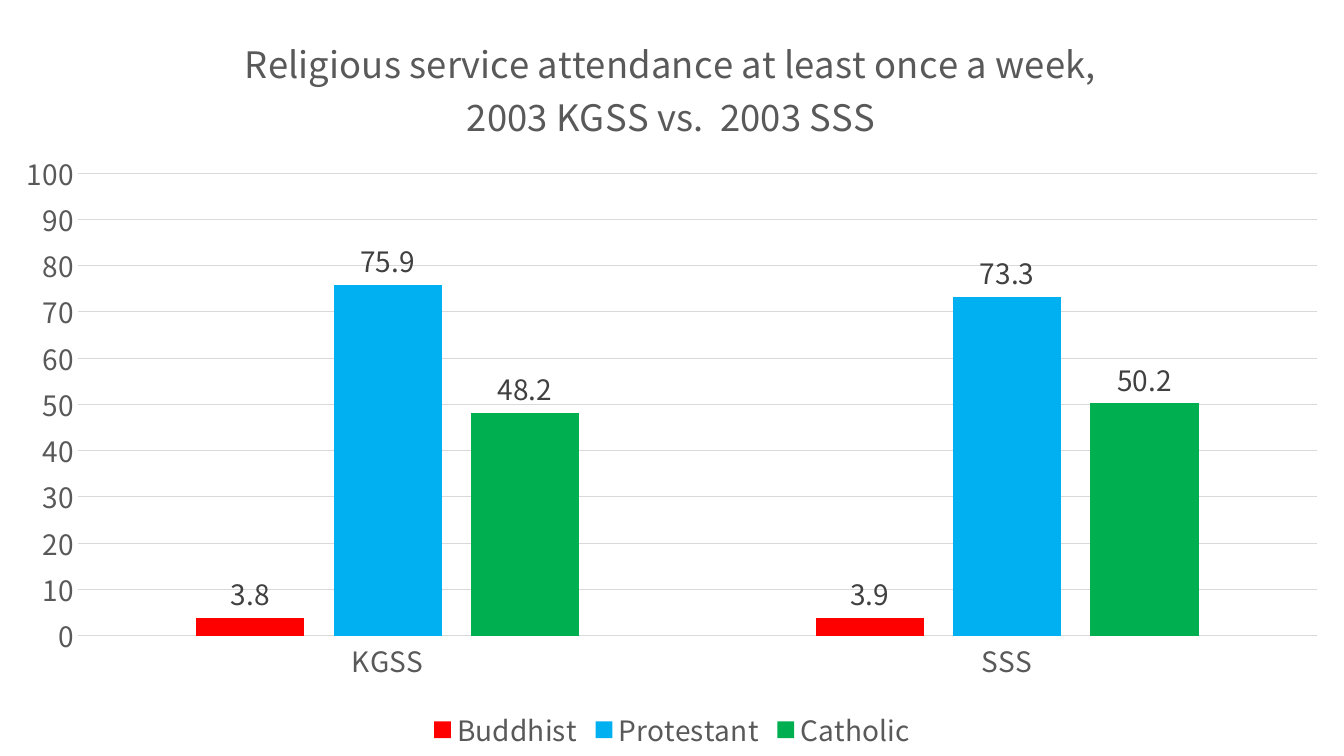
from lxml.etree import SubElement
from pptx import Presentation
from pptx.chart.data import CategoryChartData as ChartData
from pptx.dml.color import RGBColor
from pptx.enum.chart import XL_CHART_TYPE as ChartType
from pptx.enum.chart import XL_LABEL_POSITION as LabelPosition
from pptx.enum.chart import XL_LEGEND_POSITION as LegendPosition
from pptx.enum.chart import XL_TICK_MARK as TickMark
from pptx.oxml.ns import qn
from pptx.util import Cm, Pt

FONT = "Noto Sans CJK KR"
WHITE = RGBColor(0xFF, 0xFF, 0xFF)
GRAY = RGBColor(0x59, 0x59, 0x59)
DARK_GRAY = RGBColor(0x40, 0x40, 0x40)
LIGHT_GRAY = RGBColor(0xD9, 0xD9, 0xD9)
RED = RGBColor(0xFF, 0x00, 0x00)
BLUE = RGBColor(0x00, 0xB0, 0xF0)
GREEN = RGBColor(0x00, 0xB0, 0x50)

TITLE_LINES = (
    "Religious service attendance at least once a week,",
    "2003 KGSS vs.  2003 SSS",
)
SURVEYS = ("KGSS", "SSS")
ATTENDANCE = (
    ("Buddhist", (3.8, 3.9), RED),
    ("Protestant", (75.9, 73.3), BLUE),
    ("Catholic", (48.2, 50.2), GREEN),
)


def style_font(font, size=20, color=GRAY):
    """Apply the slide typeface with a size and colour."""
    font.name = FONT
    font.size = Pt(size)
    font.bold = False
    font.color.rgb = color


def write_line(para, text, **style):
    """Write one formatted line of text into a paragraph."""
    span = para.add_run()
    span.text = text
    style_font(span.font, **style)


def style_line(line):
    """Draw a thin light gray line."""
    line.color.rgb = LIGHT_GRAY
    line.width = Pt(0.75)


def place_part(element, inner=False, **fractions):
    """Place a chart part by fractions of the chart's size."""
    layout = element.find(qn("c:layout"))
    if layout is None:
        layout = element.makeelement(qn("c:layout"), {})
        text = element.find(qn("c:tx"))
        element.insert(0 if text is None else 1, layout)
    manual = SubElement(layout, qn("c:manualLayout"))
    if inner:
        SubElement(manual, qn("c:layoutTarget"), val="inner")
    for side in ("x", "y"):
        SubElement(manual, qn(f"c:{side}Mode"), val="edge")
    for side, fraction in fractions.items():
        SubElement(manual, qn(f"c:{side}"), val=str(fraction))


def add_title(chart):
    """Write the two-line chart title."""
    chart.has_title = True
    title = chart.chart_title
    title.include_in_layout = False
    frame = title.text_frame
    for index, text in enumerate(TITLE_LINES):
        para = frame.add_paragraph() if index else frame.paragraphs[0]
        write_line(para, text, size=26)
    place_part(title._element, x=0.18, y=0.04)


def style_axes(chart):
    """Format the survey axis and the percentage axis."""
    for axis in (chart.category_axis, chart.value_axis):
        axis.major_tick_mark = axis.minor_tick_mark = TickMark.NONE
        style_font(axis.tick_labels.font)
    style_line(chart.category_axis.format.line)
    percent = chart.value_axis
    percent.minimum_scale, percent.maximum_scale = 0, 100
    percent.major_unit = 10
    percent.tick_labels.number_format = "0"
    percent.tick_labels.number_format_is_linked = False
    percent.format.line.fill.background()
    style_line(percent.major_gridlines.format.line)


def style_columns(plot):
    """Colour and label the columns of each religion."""
    plot.gap_width, plot.overlap = 219, -27
    plot.vary_by_categories = False
    for series, (_, _, color) in zip(plot.series, ATTENDANCE):
        series.format.fill.solid()
        series.format.fill.fore_color.rgb = color
        labels = series.data_labels
        labels.show_value = True
        labels.position = LabelPosition.OUTSIDE_END
        labels.number_format = "0.0"
        labels.number_format_is_linked = False
        style_font(labels.font, color=DARK_GRAY)


def add_attendance_chart(page, left, top, width, height):
    """Fill the given box with the attendance chart."""
    data = ChartData(number_format="0.0")
    data.categories = SURVEYS
    for religion, values, _ in ATTENDANCE:
        data.add_series(religion, values)
    box = page.shapes.add_chart(
        ChartType.COLUMN_CLUSTERED, left, top, width, height, data
    )
    chart = box.chart
    style_font(chart.font)
    add_title(chart)
    style_axes(chart)
    style_columns(chart.plots[0])
    chart.has_legend = True
    chart.legend.position = LegendPosition.BOTTOM
    chart.legend.include_in_layout = False
    style_font(chart.legend.font)
    plot_area = chart._chartSpace.chart.plotArea
    place_part(plot_area, inner=True, x=0.058, y=0.229, w=0.922, h=0.612)


def main():
    """Build and save the one-slide deck."""
    deck = Presentation()
    deck.slide_width, deck.slide_height = Cm(33.87), Cm(19.05)
    page = deck.slides.add_slide(deck.slide_layouts[6])
    page.background.fill.solid()
    page.background.fill.fore_color.rgb = WHITE
    add_attendance_chart(page, Cm(0), Cm(0), deck.slide_width, deck.slide_height)
    deck.save("out.pptx")


if __name__ == "__main__":
    main()
